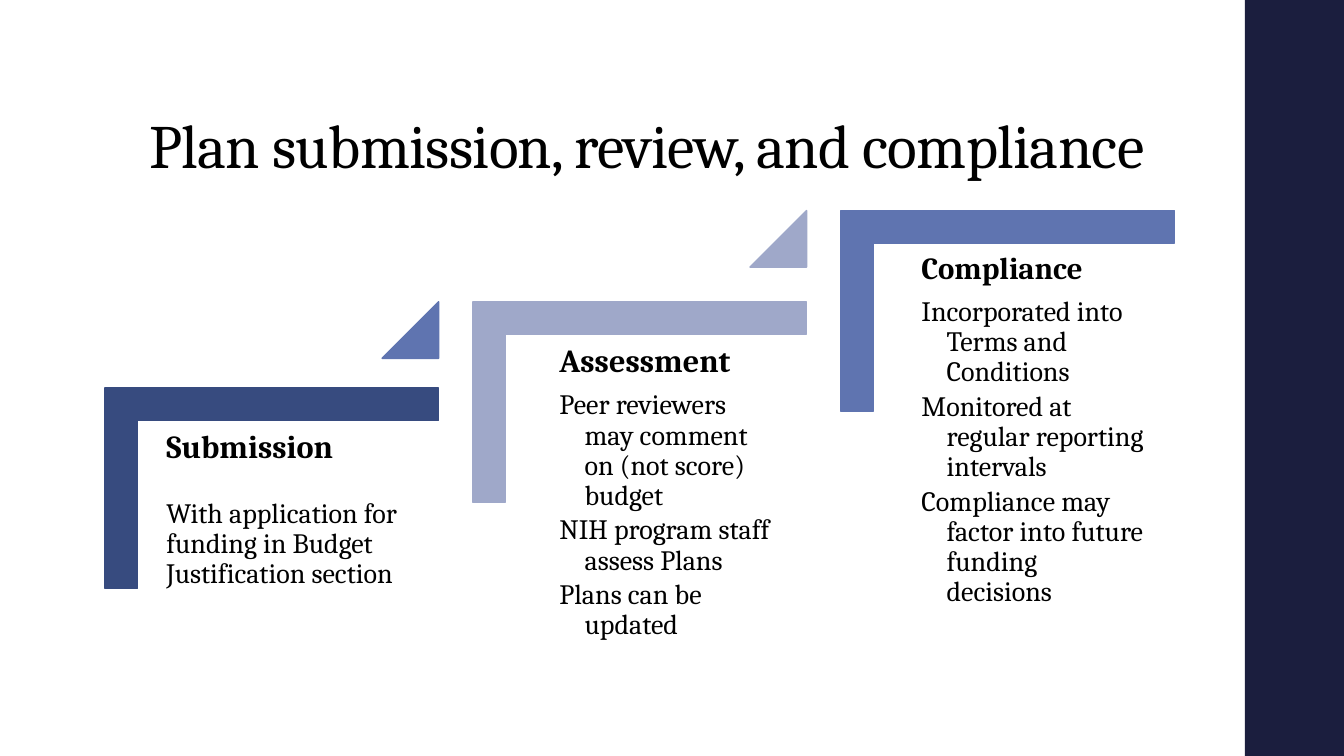
import pptx
import pptx.util
import pptx.dml.color
import pptx.enum.shapes
import pptx.enum.text

Pt = pptx.util.Pt
SHAPES = pptx.enum.shapes.MSO_SHAPE
TEXT = pptx.enum.text

SLIDE_WIDTH, SLIDE_HEIGHT = 960, 540
FONT = "Cambria"
FIRST_LEFT, STEP_PITCH = 75, 262.8
BRACKET_WIDTH, BRACKET_HEIGHT = 238.3, 143.3
ARROW_SIZE = 40.3

STEPS = [
    {"heading": "Submission", "size": 23, "gap": 24, "top": 277.2,
     "bracket": "374B7F", "arrow": "5F74B0",
     "text_left": 36.7, "text_width": 207.4, "inset": 7.2, "hanging": 0,
     "points": ["With application for funding in Budget Justification section"]},
    {"heading": "Assessment", "size": 23, "gap": 8, "top": 215.6,
     "bracket": "9FA8C9", "arrow": "9FA8C9",
     "text_left": 54.7, "text_width": 171.4, "inset": 7.2, "hanging": 18,
     "points": ["Peer reviewers may comment on (not score) budget",
                "NIH program staff assess Plans",
                "Plans can be updated"]},
    {"heading": "Compliance", "size": 22, "gap": 8, "top": 150.5,
     "bracket": "5F74B0", "arrow": None,
     "text_left": 51.1, "text_width": 175, "inset": 6.5, "hanging": 18,
     "points": ["Incorporated into Terms and Conditions",
                "Monitored at regular reporting intervals",
                "Compliance may factor into future funding decisions"]},
]


def color(hex_value):
    return pptx.dml.color.RGBColor.from_string(hex_value)


def apply(target, formats):
    for attribute, value in formats.items():
        setattr(target, attribute, value)


def add_solid(slide, preset, box, fill, outline=True):
    solid = slide.shapes.add_shape(preset, *map(Pt, box))
    solid.shadow.inherit = False
    solid.fill.solid()
    solid.fill.fore_color.rgb = color(fill)
    if outline:
        solid.line.color.rgb = color(fill)
        solid.line.width = Pt(1.1)
    else:
        solid.line.fill.background()
    return solid


def write(paragraph, words, size, bold=False, **spacing):
    run = paragraph.add_run()
    run.text = words
    apply(run.font, {"name": FONT, "size": Pt(size), "bold": bold})
    run.font.color.rgb = color("000000")
    apply(paragraph, {"line_spacing": 0.9, "space_before": Pt(0),
                      "alignment": TEXT.PP_ALIGN.LEFT, **spacing})
    return run


def add_title(slide, box):
    title = slide.shapes.title
    apply(title, dict(zip(("left", "top", "width", "height"), map(Pt, box))))
    apply(title.text_frame, {"vertical_anchor": TEXT.MSO_ANCHOR.BOTTOM,
                             "auto_size": TEXT.MSO_AUTO_SIZE.NONE,
                             "word_wrap": True})
    heading = write(title.text_frame.paragraphs[0],
                    "Plan submission, review, and compliance", 44)
    heading.font._element.set("spc", "-50")


def add_bracket(slide, box, fill):
    left, top, width, height = box
    shift = (width - height) / 2
    bracket = add_solid(slide, SHAPES.CORNER,
                        (left + shift, top - shift, height, width), fill)
    bracket.rotation = 90
    for index in range(2):
        bracket.adjustments[index] = 0.161


def add_step_text(slide, box, step):
    frame = slide.shapes.add_textbox(*map(Pt, box)).text_frame
    inset = Pt(step["inset"])
    apply(frame, {"word_wrap": True, "margin_left": inset, "margin_right": inset,
                  "margin_top": inset, "margin_bottom": inset})
    write(frame.paragraphs[0], step["heading"], step["size"], True,
          space_after=Pt(step["gap"]))
    for point in step["points"]:
        paragraph = frame.add_paragraph()
        write(paragraph, point, 20, space_after=Pt(3))
        properties = paragraph._p.get_or_add_pPr()
        properties.set("marL", str(Pt(step["hanging"])))
        properties.set("indent", str(-Pt(step["hanging"])))


def add_step(slide, box, step, next_top):
    left, top, width, height = box
    add_bracket(slide, box, step["bracket"])
    add_step_text(slide, (left + step["text_left"], top + 23.4,
                          step["text_width"], 188.6), step)
    if step["arrow"]:
        arrow = add_solid(slide, SHAPES.ISOSCELES_TRIANGLE,
                          (left + width - ARROW_SIZE, next_top,
                           ARROW_SIZE, ARROW_SIZE), step["arrow"])
        arrow.adjustments[0] = 1


def main():
    deck = pptx.Presentation()
    apply(deck, {"slide_width": Pt(SLIDE_WIDTH), "slide_height": Pt(SLIDE_HEIGHT)})
    slide = deck.slides.add_slide(deck.slide_layouts[5])
    add_solid(slide, SHAPES.RECTANGLE, (889.2, 0, 70.8, SLIDE_HEIGHT), "1B1E3E", False)
    add_title(slide, (99.4, 28.8, 763.2, 104.4))
    tops = [step["top"] for step in STEPS]
    for index, (step, next_top) in enumerate(zip(STEPS, tops[1:] + [None])):
        box = (FIRST_LEFT + index * STEP_PITCH, step["top"], BRACKET_WIDTH, BRACKET_HEIGHT)
        add_step(slide, box, step, next_top)
    deck.save("out.pptx")


if __name__ == "__main__":
    main()
